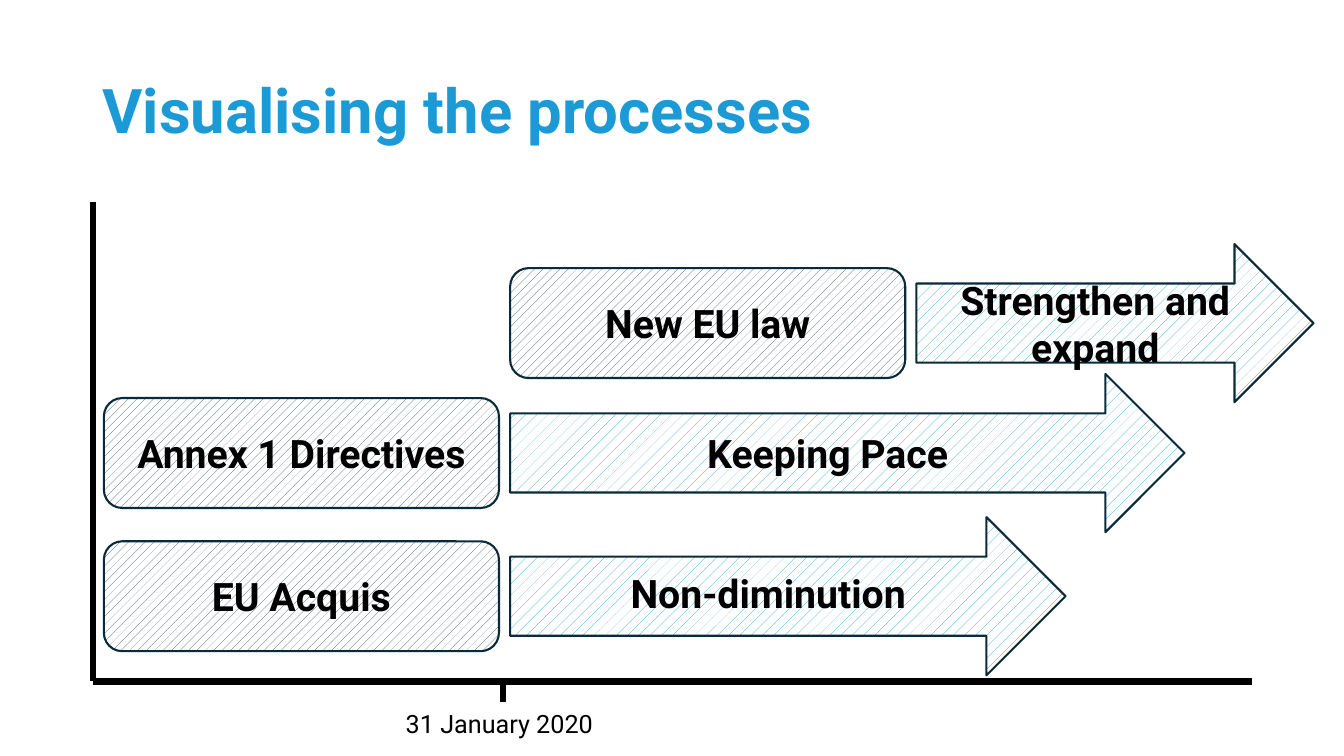
import pptx
import pptx.util
import pptx.dml.color
import pptx.enum.dml
import pptx.enum.shapes
import pptx.enum.text
import pptx.oxml

Pt = pptx.util.Pt
RGBColor = pptx.dml.color.RGBColor
Pattern = pptx.enum.dml.MSO_PATTERN
Shape = pptx.enum.shapes.MSO_SHAPE
Align = pptx.enum.text.PP_ALIGN
Anchor = pptx.enum.text.MSO_ANCHOR

BLUE = RGBColor(0x1B, 0x9A, 0xD6)
SLATE = RGBColor(0x33, 0x47, 0x5F)
NAVY = RGBColor(0x09, 0x2A, 0x39)
BLACK = RGBColor(0, 0, 0)
WHITE = RGBColor(0xFF, 0xFF, 0xFF)
FONT = "Roboto"

TITLE = "Visualising the processes"
DATE = "31 January 2020"
# source of law, its column, process, arrow length, row centre, arrow paragraph format
ROWS = [
    ("EU Acquis", 0, "Non-diminution", 396.7, 425.9, {"spacing": 0.9, "before": 10}),
    ("Annex 1 Directives", 0, "Keeping Pace", 481.7, 323.6, {}),
    ("New EU law", 1, "Strengthen and expand", 283.7, 230.8, {}),
]

COLUMN_LEFT, COLUMN_STEP = 74.2, 290.2
BOX_WIDTH, BOX_HEIGHT, ARROW_HEIGHT = 282.2, 78.5, 113
AXIS_LEFT, AXIS_TOP, AXIS_RIGHT, AXIS_BOTTOM = 66.2, 144, 894.2, 486.7
TICK_X, TICK_BOTTOM = 359.3, 501.1


def write(shape, text, size=28, color=BLACK, bold=True, align=Align.CENTER,
          anchor=Anchor.MIDDLE, spacing=None, before=None):
    frame = shape.text_frame
    frame.word_wrap = True
    frame.vertical_anchor = anchor
    para = frame.paragraphs[0]
    para.alignment = align
    if spacing is not None:
        para.line_spacing = spacing
    if before is not None:
        para.space_before = Pt(before)
    span = para.add_run()
    span.text = text
    span.font.name = FONT
    span.font.size = Pt(size)
    span.font.bold = bold
    span.font.color.rgb = color


def add_textbox(page, left, top, width, height, text, **text_format):
    box = page.shapes.add_textbox(Pt(left), Pt(top), Pt(width), Pt(height))
    write(box, text, **text_format)


def add_hatched(page, kind, left, middle, width, height, pattern, color, text, **text_format):
    """Add a pattern-filled shape centred vertically on middle."""
    shape = page.shapes.add_shape(kind, Pt(left), Pt(middle - height / 2), Pt(width), Pt(height))
    shape.shadow.inherit = False
    shape.fill.patterned()
    shape.fill.pattern = pattern
    shape.fill.fore_color.rgb = color
    shape.fill.back_color.rgb = WHITE
    shape.line.color.rgb = NAVY
    shape.line.width = Pt(1.5)
    write(shape, text, **text_format)


def add_line(page, *ends):
    line = page.shapes.add_connector(
        pptx.enum.shapes.MSO_CONNECTOR.STRAIGHT, *(Pt(end) for end in ends))
    line.line.color.rgb = BLACK
    line.line.width = Pt(4.5)
    line._element.spPr.append(pptx.oxml.parse_xml(
        '<a:effectLst xmlns:a="http://schemas.openxmlformats.org/drawingml/2006/main"/>'))


def main():
    deck = pptx.Presentation()
    deck.slide_width, deck.slide_height = Pt(960), Pt(540)
    page = deck.slides.add_slide(deck.slide_layouts[6])

    add_textbox(page, 66.2, 28.8, 828, 104.4, TITLE, size=44, color=BLUE,
                align=Align.LEFT, spacing=0.9)
    add_line(page, AXIS_LEFT, AXIS_TOP, AXIS_LEFT, AXIS_BOTTOM)
    add_line(page, AXIS_LEFT, AXIS_BOTTOM, AXIS_RIGHT, AXIS_BOTTOM)
    add_line(page, TICK_X, TICK_BOTTOM, TICK_X, AXIS_BOTTOM)
    add_textbox(page, 241.2, 502.6, 231, 29, DATE, size=18, bold=False, anchor=Anchor.TOP)

    for law, column, process, length, middle, arrow_format in ROWS:
        left = COLUMN_LEFT + column * COLUMN_STEP
        add_hatched(page, Shape.ROUNDED_RECTANGLE, left, middle, BOX_WIDTH, BOX_HEIGHT,
                    Pattern.PERCENT_20, SLATE, law)
        add_hatched(page, Shape.RIGHT_ARROW, left + COLUMN_STEP, middle, length, ARROW_HEIGHT,
                    Pattern.PERCENT_10, BLUE, process, **arrow_format)

    deck.save("out.pptx")


if __name__ == "__main__":
    main()
